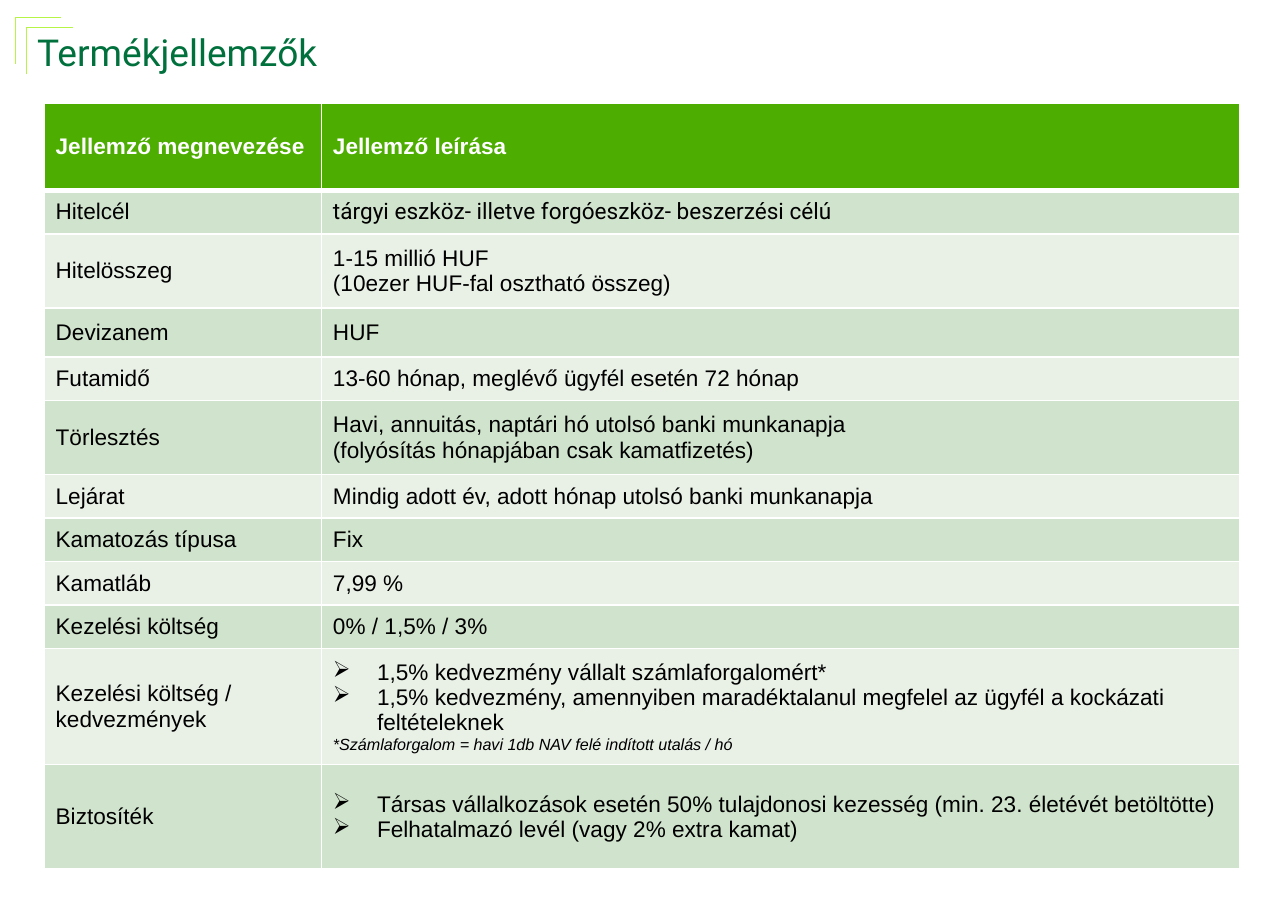
from dataclasses import dataclass
from lxml.etree import SubElement
from pptx import Presentation
from pptx.dml.color import RGBColor
from pptx.enum.text import MSO_ANCHOR, MSO_AUTO_SIZE, PP_ALIGN
from pptx.oxml.ns import qn
from pptx.util import Inches, Pt

TITLE = "Termékjellemzők"
HEADER = ("Jellemző megnevezése", "Jellemző leírása")
STANDARD_ROW = 3 / 8
FEATURES = [
    (STANDARD_ROW, "Hitelcél", [("roboto", "tárgyi eszköz- illetve forgóeszköz- beszerzési célú")]),
    (0.64, "Hitelösszeg", [("plain", "1-15 millió HUF"),
                           ("plain", "(10ezer HUF-fal osztható összeg)")]),
    (0.42, "Devizanem", [("plain", "HUF")]),
    (STANDARD_ROW, "Futamidő", [("plain", "13-60 hónap, meglévő ügyfél esetén 72 hónap")]),
    (0.64, "Törlesztés", [("plain", "Havi, annuitás, naptári hó utolsó banki munkanapja"),
                          ("plain", "(folyósítás hónapjában csak kamatfizetés)")]),
    (STANDARD_ROW, "Lejárat", [("plain", "Mindig adott év, adott hónap utolsó banki munkanapja")]),
    (STANDARD_ROW, "Kamatozás típusa", [("plain", "Fix")]),
    (STANDARD_ROW, "Kamatláb", [("plain", "7,99 %")]),
    (STANDARD_ROW, "Kezelési költség", [("plain", "0% / 1,5% / 3%")]),
    (1, "Kezelési költség / kedvezmények", [
        ("bullet", "1,5% kedvezmény vállalt számlaforgalomért*"),
        ("bullet", "1,5% kedvezmény, amennyiben maradéktalanul megfelel "
                   "az ügyfél a kockázati feltételeknek"),
        ("note", "*Számlaforgalom = havi 1db NAV felé indított utalás / hó")]),
    (0.9, "Biztosíték", [
        ("bullet", "Társas vállalkozások esetén 50% tulajdonosi kezesség "
                   "(min. 23. életévét betöltötte)"),
        ("bullet", "Felhatalmazó levél (vagy 2% extra kamat)")]),
]
HEADER_HEIGHT = 0.75
COLUMN_WIDTHS = (2.39, 7.91)
CORNERS = ((0.23, 0.24), (0.13, 0.15))
CORNER_SIZE = 0.4
BULLET_INDENT = 0.38


@dataclass(frozen=True)
class Theme:
    title: str = "00703C"
    corner: str = "B6F546"
    header: str = "4DAD00"
    bands: tuple = ("D0E3CC", "E9F1E7")
    white: str = "FFFFFF"
    black: str = "000000"
    title_font: str = "Roboto"
    body_font: str = "Arial"
    title_size: int = 23
    body_size: int = 14
    note_size: int = 10
    corner_line: float = 0.5
    border: int = 1
    header_border: int = 3


THEME = Theme()


def add_span(para, text, font, size, color, bold=False, italic=False):
    span = para.add_run()
    span.text = text
    span.font.name = font
    span.font.size = Pt(size)
    span.font.bold = bold
    span.font.italic = italic
    span.font.color.rgb = RGBColor.from_string(color)


def add_corner(slide, left, top):
    builder = slide.shapes.build_freeform(Inches(left), Inches(top + CORNER_SIZE))
    builder.add_line_segments([(Inches(left), Inches(top)),
                               (Inches(left + CORNER_SIZE), Inches(top))], close=False)
    corner = builder.convert_to_shape()
    corner.shadow.inherit = False
    corner.fill.background()
    corner.line.color.rgb = RGBColor.from_string(THEME.corner)
    corner.line.width = Pt(THEME.corner_line)


def add_title(slide):
    box = slide.shapes.title
    box.left, box.top, box.width, box.height = map(Inches, (0.32, 0.25, 10.36, 0.88))
    frame = box.text_frame
    frame.margin_left = frame.margin_right = frame.margin_top = frame.margin_bottom = 0
    frame.vertical_anchor = MSO_ANCHOR.TOP
    frame.auto_size = MSO_AUTO_SIZE.NONE
    para = frame.paragraphs[0]
    para.alignment = PP_ALIGN.LEFT
    add_span(para, TITLE, THEME.title_font, THEME.title_size, THEME.title)


def add_bullet(para):
    properties = para._p.get_or_add_pPr()
    properties.set("marL", str(Inches(BULLET_INDENT)))
    properties.set("indent", str(-Inches(BULLET_INDENT)))
    SubElement(properties, qn("a:buChar"), char="➢")


def set_borders(cell, top, bottom):
    properties = cell._tc.get_or_add_tcPr()
    widths = {"L": THEME.border, "R": THEME.border, "T": top, "B": bottom}
    for side, width in widths.items():
        line = SubElement(properties, qn(f"a:ln{side}"), w=str(Pt(width)))
        fill = SubElement(line, qn("a:solidFill"))
        SubElement(fill, qn("a:srgbClr"), val=THEME.white)


def fill_cell(cell, lines, row):
    is_header = row == 0
    set_borders(cell,
                THEME.header_border if row == 1 else THEME.border,
                THEME.header_border if is_header else THEME.border)
    cell.fill.solid()
    cell.fill.fore_color.rgb = RGBColor.from_string(
        THEME.header if is_header else THEME.bands[(row - 1) % 2])
    cell.vertical_anchor = MSO_ANCHOR.MIDDLE
    frame = cell.text_frame
    for index, (style, text) in enumerate(lines):
        para = frame.add_paragraph() if index else frame.paragraphs[0]
        if style == "bullet":
            add_bullet(para)
        add_span(para, text,
                 THEME.title_font if style == "roboto" else THEME.body_font,
                 THEME.note_size if style == "note" else THEME.body_size,
                 THEME.white if is_header else THEME.black,
                 bold=is_header, italic=style == "note")


def add_features(slide):
    rows = [(HEADER_HEIGHT, HEADER[0], [("plain", HEADER[1])])] + FEATURES
    height = sum(row[0] for row in rows)
    table = slide.shapes.add_table(len(rows), len(COLUMN_WIDTHS), Inches(0.38), Inches(0.89),
                                   Inches(sum(COLUMN_WIDTHS)), Inches(height)).table
    for column, width in zip(table.columns, COLUMN_WIDTHS):
        column.width = Inches(width)
    for index, (height, name, description) in enumerate(rows):
        table.rows[index].height = Inches(height)
        fill_cell(table.cell(index, 0), [("plain", name)], index)
        fill_cell(table.cell(index, 1), description, index)


def main():
    deck = Presentation()
    deck.slide_width, deck.slide_height = Inches(11.1), Inches(7.84)
    slide = deck.slides.add_slide(deck.slide_layouts[5])
    for left, top in CORNERS:
        add_corner(slide, left, top)
    add_title(slide)
    add_features(slide)
    deck.save("out.pptx")


if __name__ == "__main__":
    main()
